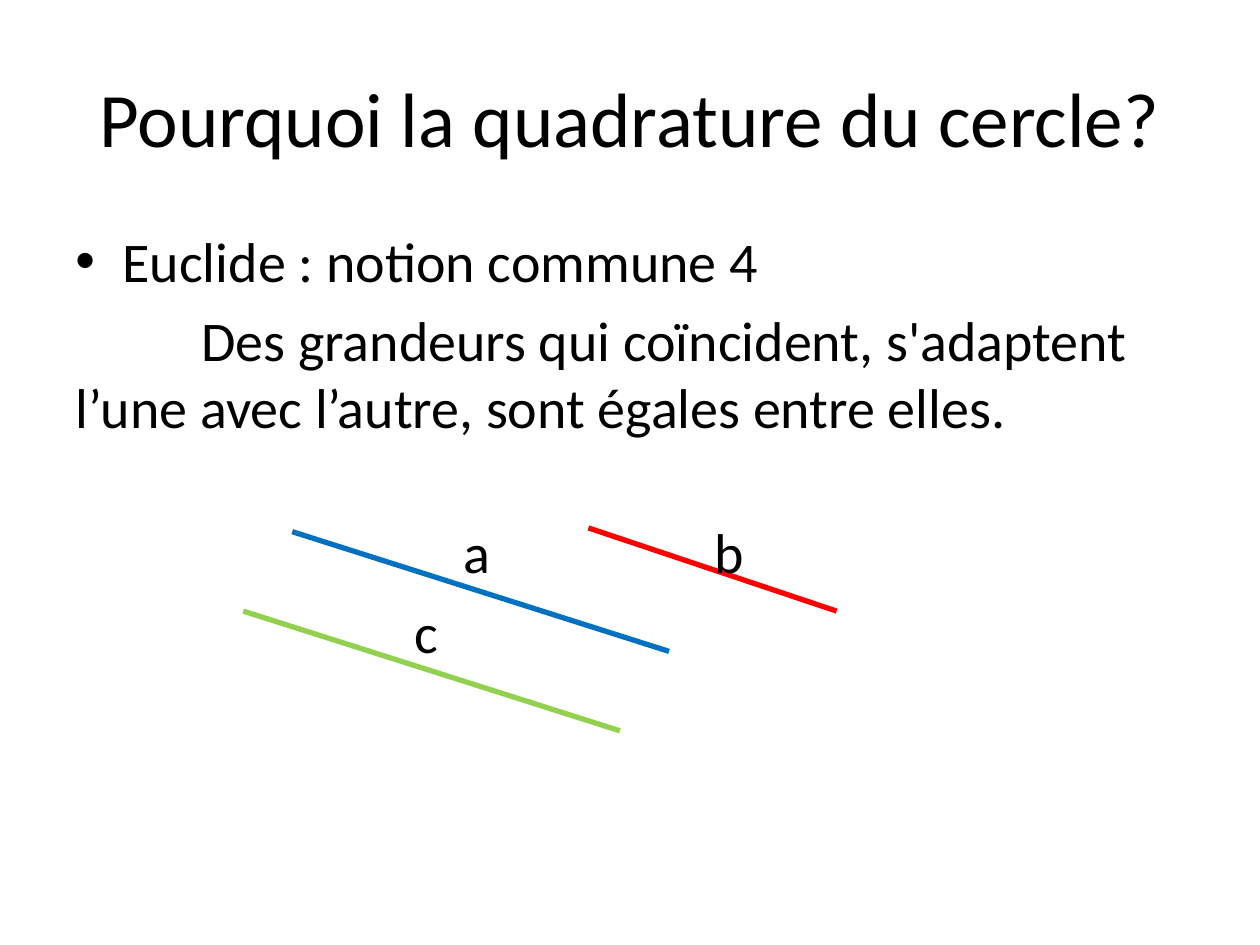
"""Build a slide on Euclid's fourth common notion with three labelled segments."""
from typing import NamedTuple

from lxml.etree import SubElement
from pptx import Presentation
from pptx.dml.color import RGBColor
from pptx.enum.shapes import MSO_CONNECTOR as Connector
from pptx.enum.text import MSO_ANCHOR as Anchor, PP_ALIGN as Align
from pptx.oxml.ns import qn
from pptx.util import Inches, Pt

UNIT = Inches(0.1)
COLUMNS, ROWS = 100, 75
COLORS = {"text": "000000", "blue": "0070C0", "red": "FF0000", "green": "92D050"}


class Line(NamedTuple):
    text: str
    indent: float = 0
    margin: float = 0
    bullet: str = ""


class Box(NamedTuple):
    column: float
    row: float
    width: float
    height: float


class Segment(NamedTuple):
    label: str
    color: str
    column: float
    row: float
    run: float
    drop: float
    label_right: float
    label_up: float
    label_width: float


TITLE = [Line("Pourquoi la quadrature du cercle?")]
BODY = [
    Line("Euclide : notion commune 4", indent=-3.75, margin=3.75, bullet="•"),
    Line("Des grandeurs qui coïncident, s'adaptent l’une avec l’autre, "
         "sont égales entre elles.", indent=10),
]
SEGMENTS = [
    Segment("a", "blue", 23.2, 42.2, 29.9, 9.5, 12.6, 1.6, 5.5),
    Segment("b", "red", 46.7, 41.9, 19.7, 6.6, 9, 1.3, 3.9),
    Segment("c", "green", 19.3, 48.5, 29.9, 9.5, 12.6, 1.6, 5.5),
]


def grid(cells: float) -> int:
    """Convert grid cells to a length."""
    return round(cells * UNIT)


def add_text(shapes, box: Box, lines: list[Line], *, size: float = 32,
             align=Align.LEFT, anchor=Anchor.TOP) -> None:
    """Add a text box holding one paragraph per line."""
    frame = shapes.add_textbox(*map(grid, box)).text_frame
    frame.word_wrap = True
    frame.vertical_anchor = anchor
    for index, line in enumerate(lines):
        paragraph = frame.add_paragraph() if index else frame.paragraphs[0]
        properties = paragraph._p.get_or_add_pPr()
        properties.set("marL", str(grid(line.margin)))
        properties.set("indent", str(grid(line.indent)))
        if line.bullet:
            SubElement(properties, qn("a:buFont"), typeface="Arial")
            SubElement(properties, qn("a:buChar"), char=line.bullet)
        paragraph.text = line.text
        paragraph.alignment = align
        paragraph.space_before = Pt(0.2 * size if index else 0)
        font = paragraph.runs[0].font
        font.name, font.size = "Calibri", Pt(size)
        font.color.rgb = RGBColor.from_string(COLORS["text"])


def add_segment(shapes, segment: Segment) -> None:
    """Add a coloured segment grouped with its label."""
    group = shapes.add_group_shape().shapes
    left, top = segment.column, segment.row
    ends = (left, top, left + segment.run, top + segment.drop)
    connector = group.add_connector(Connector.STRAIGHT, *map(grid, ends))
    connector.line.color.rgb = RGBColor.from_string(COLORS[segment.color])
    connector.line.width = Pt(3)
    SubElement(connector._element.spPr, qn("a:effectLst"))
    label_box = Box(left + segment.label_right, top - segment.label_up,
                    segment.label_width, 6.4)
    add_text(group, label_box, [Line(segment.label)])


def main() -> None:
    """Build and save the slide."""
    presentation = Presentation()
    presentation.slide_width, presentation.slide_height = grid(COLUMNS), grid(ROWS)
    slide = presentation.slides.add_slide(presentation.slide_layouts[6])
    add_text(slide.shapes, Box(5, 3, 90, 12.5), TITLE, size=44,
             align=Align.CENTER, anchor=Anchor.MIDDLE)
    add_text(slide.shapes, Box(5, 17.5, 90, 49.5), BODY)
    for segment in SEGMENTS:
        add_segment(slide.shapes, segment)
    presentation.save("out.pptx")


if __name__ == "__main__":
    main()
